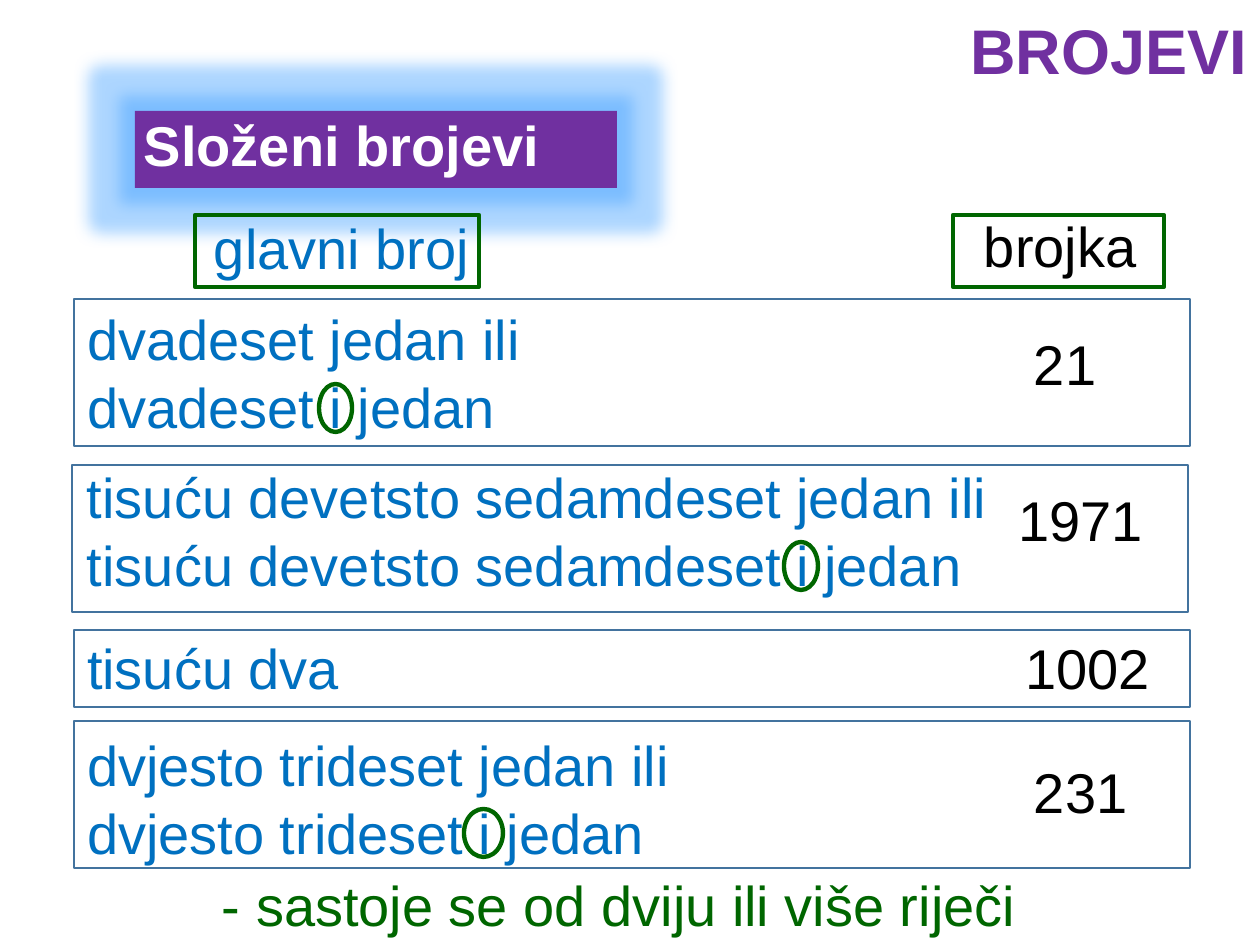
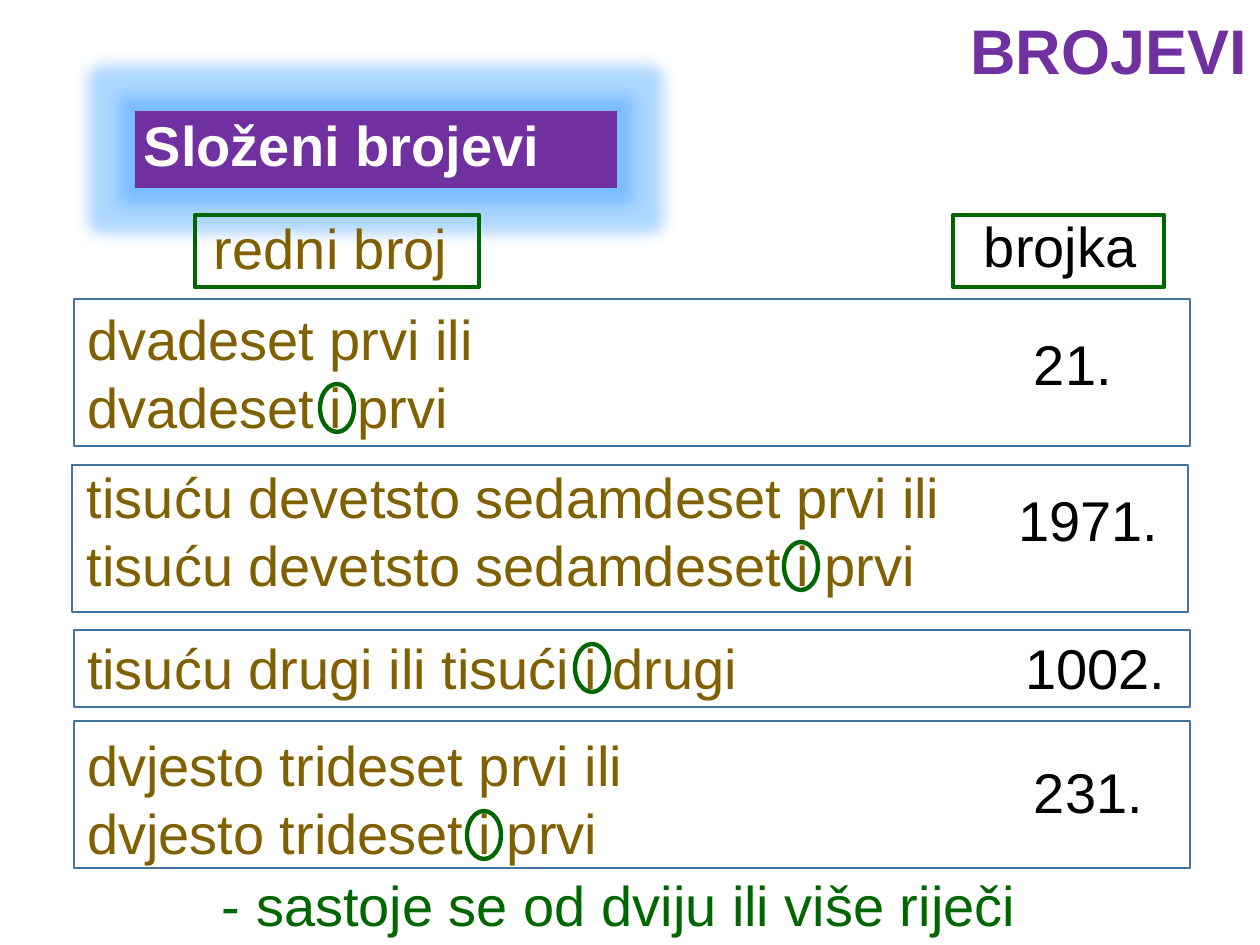
from collections import namedtuple

from lxml import etree
from pptx import Presentation
from pptx import util as u
from pptx.dml.color import RGBColor
from pptx.enum import shapes, text
from pptx.oxml.ns import qn

PURPLE = RGBColor(0x70, 0x30, 0xA0)
WHITE = RGBColor(0xFF, 0xFF, 0xFF)
BLACK = RGBColor(0x00, 0x00, 0x00)
BLUE = RGBColor(0x00, 0x70, 0xC0)
OLIVE = RGBColor(0x80, 0x60, 0x00)
GREEN = RGBColor(0x00, 0x66, 0x00)
FRAME_BLUE = RGBColor(0x43, 0x73, 0x9E)
GLOW_BLUE = RGBColor(0x33, 0x99, 0xFF)

FONT = "Arial"
PX_PER_INCH = 126
INSETS = (13, 6)
TIGHT_INSETS = (9, 5)
ROW_WIDTH = 1116
NUMBER_SIZE = (235, 81)

Row = namedtuple("Row", "frame phrase number")
Entry = namedtuple("Entry", "phrase number ring", defaults=(None,))

ROWS = [
    Row((74, 299, ROW_WIDTH, 147), (0, 0, 513, 149), (947, 25)),
    Row((72, 465, ROW_WIDTH, 147), (2, -8, 931, 149), (933, 15)),
    Row((74, 630, ROW_WIDTH, 77), (0, -3, 776, 81), (938, -3)),
    Row((74, 721, ROW_WIDTH, 147), (0, 4, 685, 149), (947, 31)),
]

CARDINALS = [
    Entry("dvadeset jedan ili dvadeset i jedan", "21", (245, 85, 33, 48)),
    Entry("tisuću devetsto sedamdeset jedan ili tisuću devetsto sedamdeset i jedan",
          "1971", (712, 77, 34, 48)),
    Entry("tisuću dva", "1002"),
    Entry("dvjesto trideset jedan ili dvjesto trideset i jedan", "231", (390, 88, 39, 48)),
]

ORDINALS = [
    Entry("dvadeset prvi ili dvadeset i prvi", "21.", (246, 85, 34, 48)),
    Entry("tisuću devetsto sedamdeset prvi ili tisuću devetsto sedamdeset i prvi",
          "1971.", (712, 77, 34, 48)),
    Entry("tisuću drugi ili tisući i drugi", "1002.", (501, 14, 34, 48)),
    Entry("dvjesto trideset prvi ili dvjesto trideset i prvi", "231.", (393, 90, 34, 48)),
]


def px(length):
    """Turn a length in px into EMU."""
    return u.Emu(round(length * u.Inches(1) / PX_PER_INCH))


def inside(box, part):
    """Move a part given relative to a box onto the slide."""
    return (box[0] + part[0], box[1] + part[1], *part[2:])


def add_words(slide, box, words, color, size=32, bold=False, insets=INSETS, indent=0):
    """Add a wrapped text box holding one run and return its text frame."""
    frame = slide.shapes.add_textbox(*map(px, box)).text_frame
    frame.word_wrap = True
    frame.margin_left = px(insets[0] + indent)
    frame.margin_right = px(insets[0])
    frame.margin_top = frame.margin_bottom = px(insets[1])
    run = frame.paragraphs[0].add_run()
    run.text = words
    run.font.name = FONT
    run.font.size = u.Pt(size)
    run.font.bold = bold
    run.font.color.rgb = color
    return frame


def add_outline(slide, kind, box, color, width):
    """Add an unfilled shape with a coloured line."""
    outline = slide.shapes.add_shape(kind, *map(px, box))
    outline.shadow.inherit = False
    outline.fill.background()
    outline.line.color.rgb = color
    outline.line.width = u.Pt(width)


def add_glow(shape, color, radius, alpha):
    """Give a shape a soft translucent glow."""
    shape.shadow.inherit = False
    effects = shape.element.spPr.find(qn("a:effectLst"))
    glow = etree.SubElement(effects, qn("a:glow"), rad=str(u.Pt(radius)))
    tint = etree.SubElement(glow, qn("a:srgbClr"), val=str(color))
    etree.SubElement(tint, qn("a:alpha"), val=str(alpha * 1000))


def add_title(slide, box):
    """Add the right-aligned slide title."""
    title = add_words(slide, box, "BROJEVI", PURPLE, size=36, bold=True)
    title.vertical_anchor = text.MSO_ANCHOR.BOTTOM
    title.paragraphs[0].alignment = text.PP_ALIGN.RIGHT
    title.paragraphs[0].line_spacing = 0.9


def add_banner(slide, box):
    """Add the glowing topic banner."""
    band = slide.shapes.add_shape(shapes.MSO_SHAPE.RECTANGLE, *map(px, box))
    band.fill.solid()
    band.fill.fore_color.rgb = PURPLE
    band.line.fill.background()
    add_glow(band, GLOW_BLUE, 18, 40)
    topic = inside(box, (0, -5, 597, 66))
    add_words(slide, topic, "Složeni brojevi", WHITE, bold=True, insets=TIGHT_INSETS)


def add_headings(slide, box, kind, color):
    """Add the two framed column headings."""
    add_words(slide, inside(box, (-6, -6, 427, 78)), kind, color,
              insets=TIGHT_INSETS, indent=16)
    add_words(slide, inside(box, (776, -10, 190, 81)), "brojka", BLACK)
    for frame in ((0, 0, 284, 72), (758, 0, 211, 72)):
        add_outline(slide, shapes.MSO_SHAPE.RECTANGLE, inside(box, frame), GREEN, 2.5)


def add_row(slide, row, entry, color):
    """Add one framed number in words and digits, with its conjunction ringed."""
    add_words(slide, inside(row.frame, row.phrase), entry.phrase, color)
    add_words(slide, inside(row.frame, row.number + NUMBER_SIZE), entry.number, BLACK)
    add_outline(slide, shapes.MSO_SHAPE.RECTANGLE, row.frame, FRAME_BLUE, 1)
    if entry.ring:
        add_outline(slide, shapes.MSO_SHAPE.OVAL, inside(row.frame, entry.ring), GREEN, 2.5)


def add_numbers_slide(deck, kind, color, entries):
    """Add a slide on one kind of compound number."""
    slide = deck.slides.add_slide(deck.slide_layouts[6])
    add_banner(slide, (135, 111, 482, 77))
    add_headings(slide, (195, 215), kind, color)
    for row, entry in zip(ROWS, entries):
        add_row(slide, row, entry, color)
    add_words(slide, (209, 864, 842, 81), "- sastoje se od dviju ili više riječi", GREEN)
    add_title(slide, (331, -2, 929, 96))


def main():
    """Build and save the deck."""
    deck = Presentation()
    deck.slide_width, deck.slide_height = px(1260), px(945)
    add_numbers_slide(deck, "glavni broj", BLUE, CARDINALS)
    add_numbers_slide(deck, "redni broj", OLIVE, ORDINALS)
    deck.save("out.pptx")


if __name__ == "__main__":
    main()
